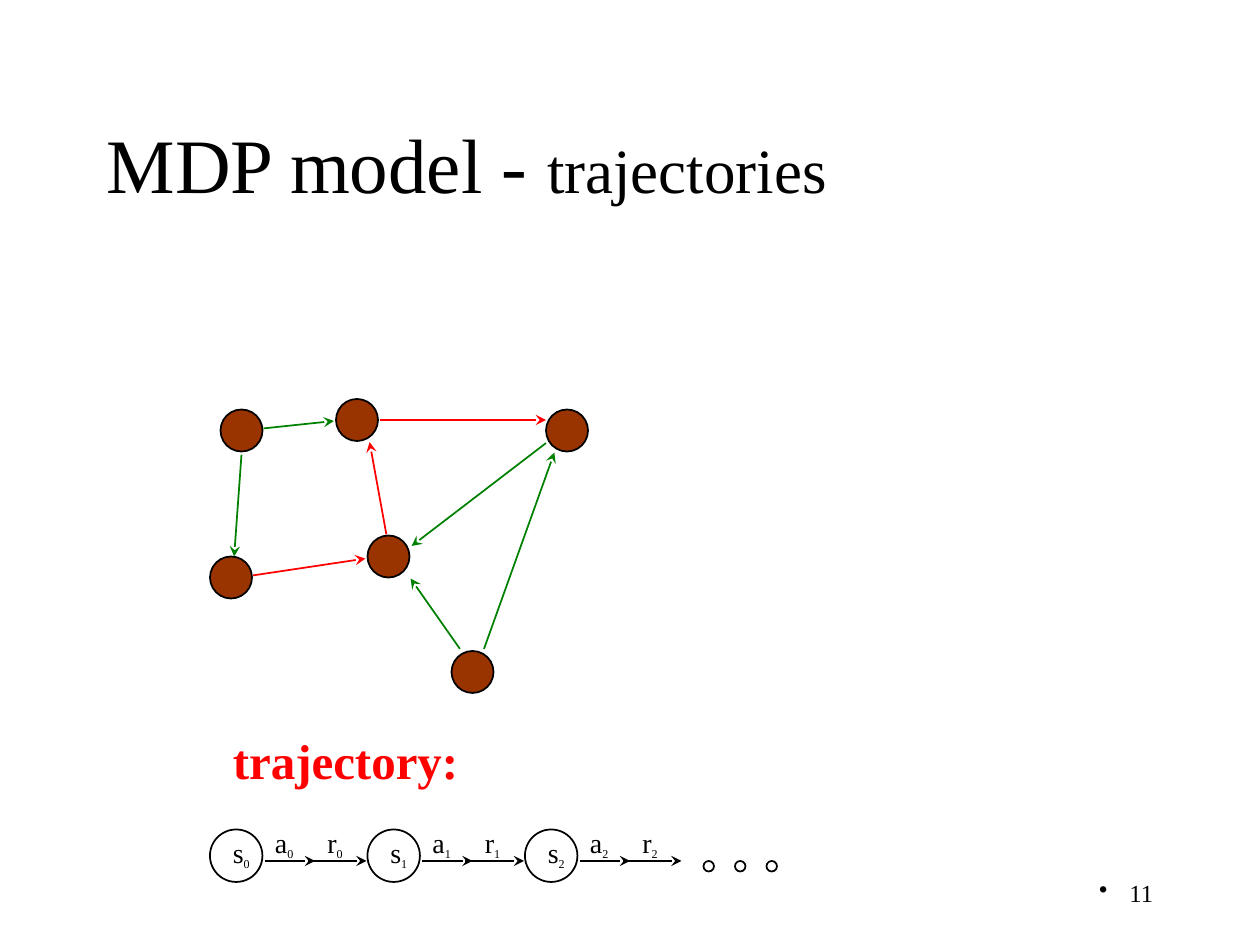
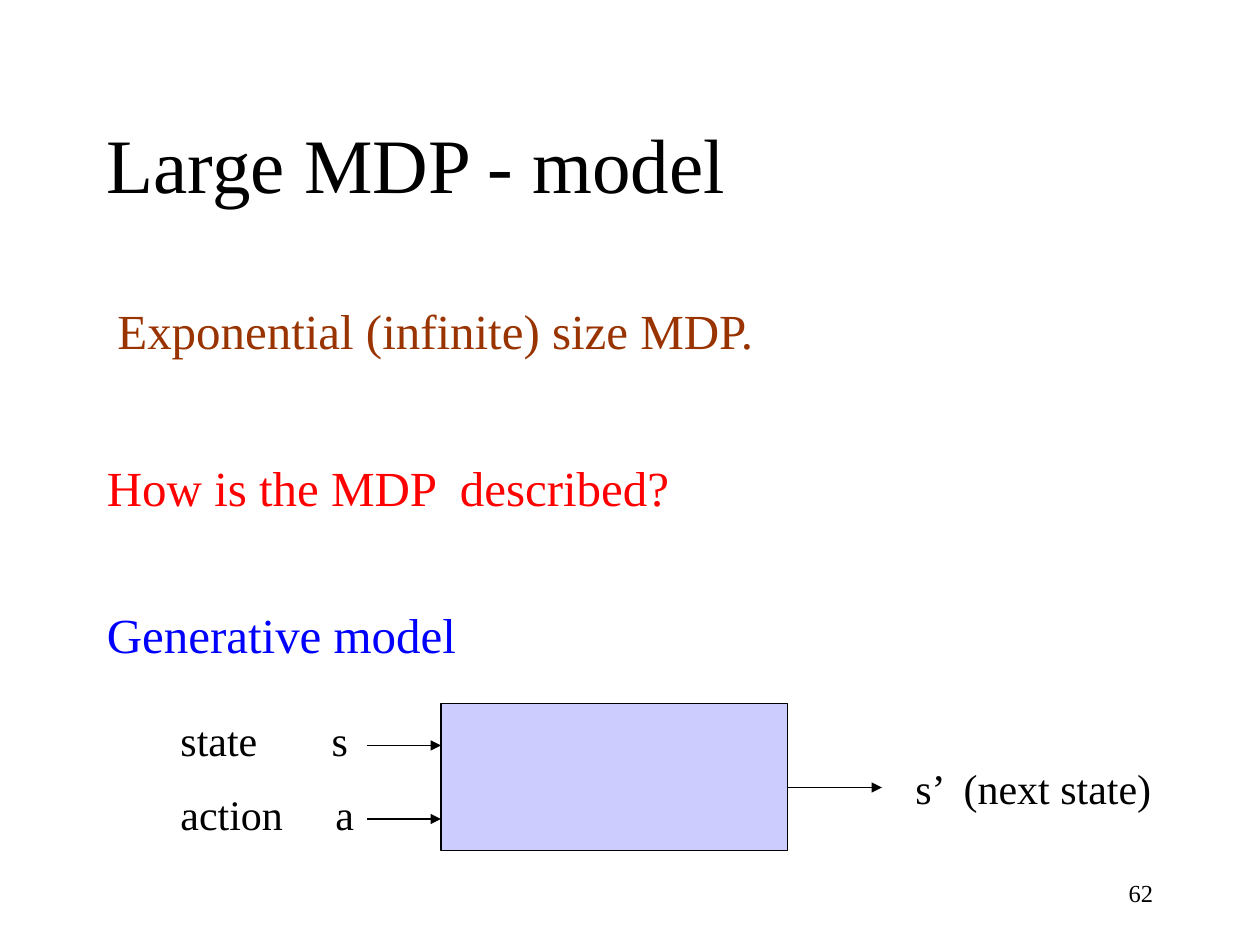
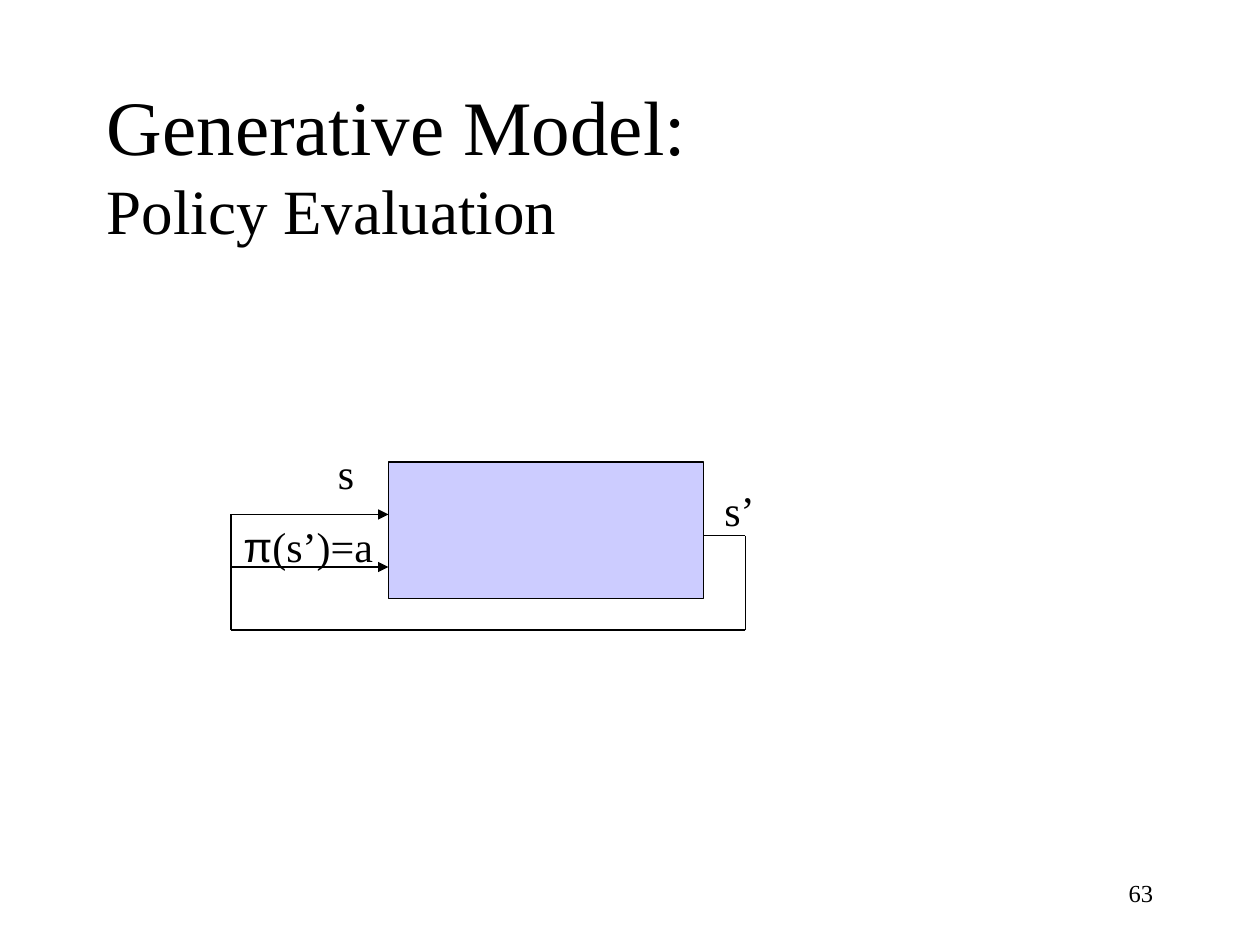
import itertools

import pptx
import pptx.dml.color
import pptx.enum.shapes
import pptx.enum.text
import pptx.oxml.ns
import pptx.util
from lxml import etree

COLOURS = {
    "ink": "000000",
    "node": "993300",
    "chosen": "FF0000",
    "other": "008000",
    "model": "0000FF",
    "box": "CCCCFF",
}
FONT = "Times New Roman"
CELLS_PER_INCH = 12
SHAPES = pptx.enum.shapes.MSO_SHAPE
ALIGN = pptx.enum.text.PP_ALIGN
ANCHOR = pptx.enum.text.MSO_ANCHOR


def cells(*counts):
    """Turn grid cells into lengths."""
    return [pptx.util.Inches(count / CELLS_PER_INCH) for count in counts]


def rgb(colour):
    """Look up a named colour."""
    return pptx.dml.color.RGBColor.from_string(COLOURS[colour])


def add_xml(parent, tag, **attributes):
    """Append a drawing element to its parent."""
    return etree.SubElement(parent, pptx.oxml.ns.qn(tag), attributes)


def add_label(slide, box, text, size, colour="ink", align=ALIGN.LEFT, anchor=ANCHOR.TOP):
    """Write one paragraph in a box and return the paragraph."""
    frame = slide.shapes.add_textbox(*cells(*box)).text_frame
    frame.word_wrap = True
    frame.vertical_anchor = anchor
    paragraph = frame.paragraphs[0]
    paragraph.alignment = align
    paragraph.font.name = FONT
    paragraph.font.size = pptx.util.Pt(size)
    paragraph.font.color.rgb = rgb(colour)
    paragraph.add_run().text = text
    return paragraph


def add_part(paragraph, text, size):
    """Continue a paragraph in another size."""
    run = paragraph.add_run()
    run.text = text
    run.font.size = pptx.util.Pt(size)
    return run


def add_symbol(slide, box, letter, index):
    """Write a letter with a subscript."""
    subscript = add_part(add_label(slide, box, letter, 16), str(index), 12)
    subscript.font._element.set("baseline", "-25000")


def add_figure(slide, kind, box, fill=None, weight=1):
    """Draw an outlined preset shape."""
    figure = slide.shapes.add_shape(kind, *cells(*box))
    figure.shadow.inherit = False
    figure.line.color.rgb = rgb("ink")
    figure.line.width = pptx.util.Pt(weight)
    if fill:
        figure.fill.solid()
        figure.fill.fore_color.rgb = rgb(fill)
    else:
        figure.fill.background()


def add_line(slide, start, end, colour="ink", weight=0.75, head=None):
    """Draw a straight line, with an arrowhead at its end if one is named."""
    straight = pptx.enum.shapes.MSO_CONNECTOR.STRAIGHT
    line = slide.shapes.add_connector(straight, *cells(*start, *end))
    line.line.color.rgb = rgb(colour)
    line.line.width = pptx.util.Pt(weight)
    if head:
        add_xml(line.line._get_or_add_ln(), "a:tailEnd", type=head)
    add_xml(line._element.spPr, "a:effectLst")


def add_page(deck, title, number):
    """Add a blank slide with its title and number; return slide, title and number."""
    slide = deck.slides.add_slide(deck.slide_layouts[6])
    heading = add_label(slide, (9, 8, 102, 15), title, 44, anchor=ANCHOR.MIDDLE)
    folio = add_label(slide, (86, 82, 25, 6), str(number), 14,
                      align=ALIGN.RIGHT, anchor=ANCHOR.MIDDLE)
    return slide, heading, folio


def draw_graph(slide, left, top):
    """Draw the states and the moves between them."""
    nodes = [(12, 0), (1, 1), (15, 13), (0, 15), (32, 1), (23, 24)]
    moves = {
        "other": [((23.8, 23.8), (19.1, 17.1)), ((26.1, 23.8), (32.8, 5.1)),
                  ((5.1, 2.8), (11.8, 2.1)), ((3, 5.3), (2.3, 15)),
                  ((32, 4.2), (19.2, 14))],
        "chosen": [((4.1, 16.8), (14.8, 15.2)), ((16.2, 2), (32, 2)),
                   ((16.8, 12.9), (15.2, 4.1))],
    }
    for x, y in nodes:
        add_figure(slide, SHAPES.OVAL, (left + x, top + y, 4, 4), "node")
    for colour, ends in moves.items():
        for (x1, y1), (x2, y2) in ends:
            add_line(slide, (left + x1, top + y1), (left + x2, top + y2),
                     colour, 1, "stealth")


def draw_trajectory(slide, left, top, steps=3):
    """Draw the chain of states, actions and rewards."""
    heading = add_label(slide, (left + 1, top, 24, 7), "trajectory:", 28, "chosen")
    heading.font.bold = True
    row = top + 9
    for step in range(steps):
        x = left + 15 * step
        add_figure(slide, SHAPES.OVAL, (x, row + 1, 5, 5))
        add_symbol(slide, (x + 1, row + 1, 5, 4.5), "s", step)
        for letter, offset in (("a", 5), ("r", 10)):
            add_symbol(slide, (x + offset, row, 7, 4.5), letter, step)
        for start, end in ((5.2, 10), (9.3, 14.9)):
            add_line(slide, (x + start, row + 4), (x + end, row + 4),
                     weight=1, head="stealth")
    for dot in range(3):
        add_figure(slide, SHAPES.OVAL, (left + 47 + 3 * dot, row + 4, 1, 1))


def draw_generator(slide, box, inputs, lead):
    """Draw the generative box with arrows into its left side."""
    left, top = box[:2]
    add_figure(slide, SHAPES.RECTANGLE, box, "box", 0.75)
    for row in inputs:
        add_line(slide, (left - lead, top + row), (left, top + row), head="triangle")


def build_trajectories(deck):
    """Build the slide on trajectories."""
    slide, heading, folio = add_page(deck, "MDP model - ", 11)
    add_part(heading, "trajectories", 36)
    properties = folio._p.get_or_add_pPr()
    indent = pptx.util.Inches(0.24)
    properties.set("marL", str(indent))
    properties.set("indent", str(-indent))
    bullet = etree.Element(pptx.oxml.ns.qn("a:buChar"), char="•")
    properties.insert(0, bullet)
    draw_graph(slide, 20, 38)
    draw_trajectory(slide, 20, 69)


def build_large_model(deck):
    """Build the slide on describing a large MDP."""
    slide = add_page(deck, "Large MDP - model", 62)[0]
    for left, top, text, colour in (
        (10, 28, "Exponential (infinite) size MDP.", "node"),
        (9, 43, "How is the MDP  described?", "chosen"),
        (9, 57, "Generative model", "model"),
    ):
        add_label(slide, (left, top, 76, 7), text, 28, colour)
    left, top = 42, 67
    draw_generator(slide, (left, top, 33, 14), (4, 11), 7)
    for row, text, stop in ((0.5, "state\ts", 1.2), (7.5, "action\ta", 1.23)):
        paragraph = add_label(slide, (left - 26, top + row, 20, 6), text, 24)
        tabs = etree.Element(pptx.oxml.ns.qn("a:tabLst"))
        add_xml(tabs, "a:tab", pos=str(pptx.util.Inches(stop)), algn="l")
        paragraph._p.get_or_add_pPr().insert(0, tabs)
    add_line(slide, (left + 33, top + 8), (left + 42, top + 8), head="triangle")
    add_label(slide, (left + 44, top + 5, 30, 6), "s’  (next state)", 24)


def build_policy_evaluation(deck):
    """Build the slide on evaluating a policy."""
    slide, heading, _ = add_page(deck, "Generative Model: ", 63)
    heading.add_line_break()
    add_part(heading, "Policy Evaluation", 36)
    left, top = 37, 44
    draw_generator(slide, (left, top, 30, 13), (5, 10), 15)
    feedback = [(30, 7), (34, 7), (34, 16), (-15, 16), (-15, 5)]
    corners = [(left + x, top + y) for x, y in feedback]
    for start, end in itertools.pairwise(corners):
        add_line(slide, start, end)
    add_label(slide, (left - 6, top - 2, 5, 6), "s", 24)
    add_label(slide, (left + 30.8, top + 1.6, 8, 6), "s’", 24)
    policy = add_label(slide, (left - 15, top + 5, 20, 6), "π", 24)
    policy.runs[0].font.name = "Arial"
    add_part(policy, "(s’)=a", 24)


def main():
    """Build and save the deck."""
    deck = pptx.Presentation()
    deck.slide_width, deck.slide_height = cells(120, 90)
    build_trajectories(deck)
    build_large_model(deck)
    build_policy_evaluation(deck)
    deck.save("out.pptx")


if __name__ == "__main__":
    main()
